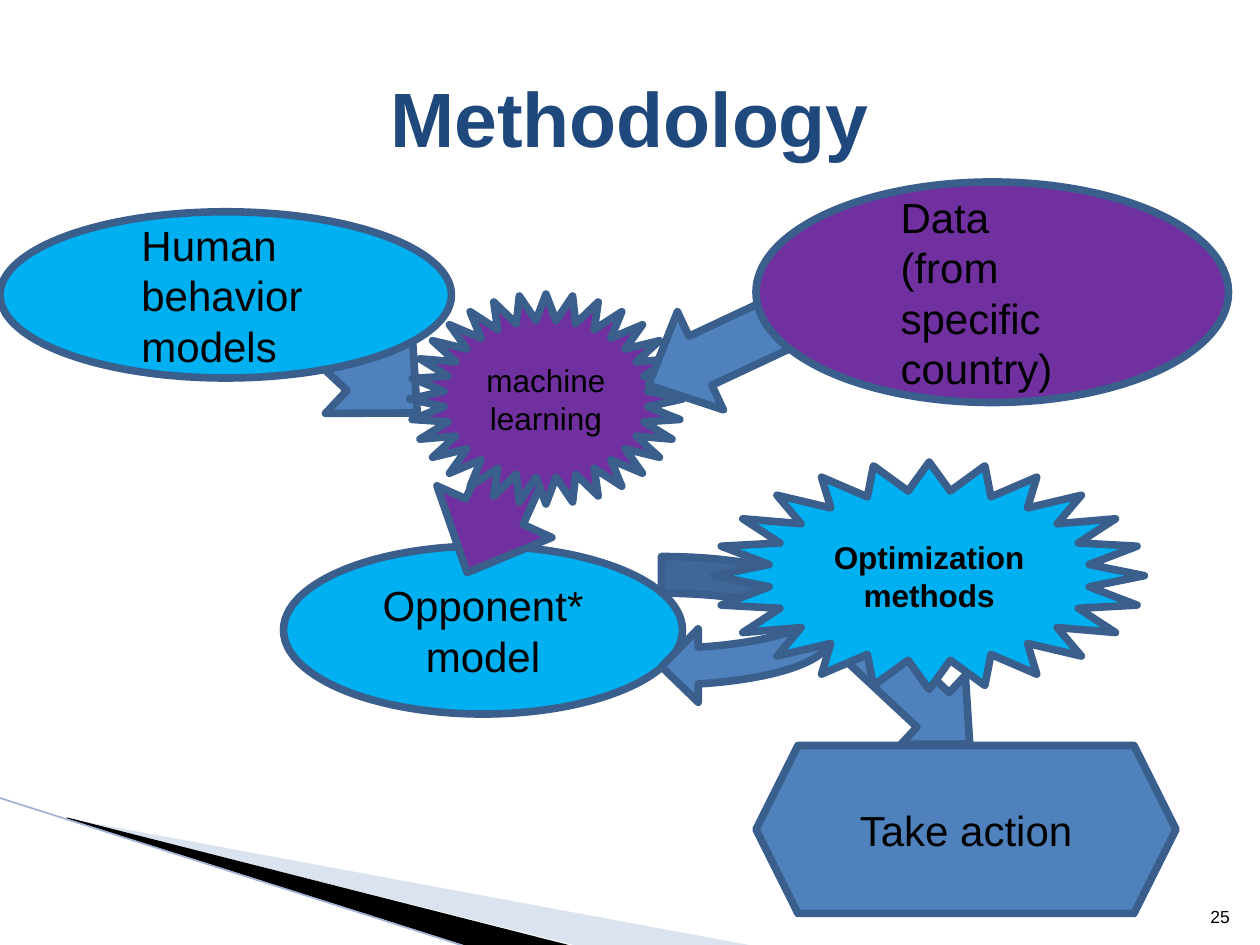
from dataclasses import dataclass
from typing import Optional

from lxml.etree import SubElement
from pptx import Presentation
from pptx.dml.color import RGBColor
from pptx.enum.shapes import MSO_CONNECTOR, MSO_SHAPE as Preset
from pptx.enum.text import MSO_ANCHOR as Anchor, PP_ALIGN as Align
from pptx.oxml.ns import qn
from pptx.util import Pt

FONT = "Arial"
BLACK = RGBColor(0x00, 0x00, 0x00)
NAVY = RGBColor(0x1F, 0x49, 0x7D)
STEEL = RGBColor(0x4F, 0x81, 0xBD)
OUTLINE = RGBColor(0x3A, 0x5F, 0x8C)
CYAN = RGBColor(0x00, 0xB0, 0xF0)
PURPLE = RGBColor(0x70, 0x30, 0xA0)
PALE_BLUE = RGBColor(0xA7, 0xB9, 0xDB)
EDGE_BLUE = RGBColor(0x9E, 0xB3, 0xD6)


@dataclass(frozen=True)
class Box:
    left: float
    top: float
    width: float
    height: float

    def lengths(self) -> tuple:
        return Pt(self.left), Pt(self.top), Pt(self.width), Pt(self.height)


@dataclass(frozen=True)
class Node:
    preset: Preset
    box: Box
    fill: RGBColor
    lines: tuple = ()
    size: float = 24
    bold: bool = False
    indent: float = 0


@dataclass(frozen=True)
class Arrow:
    box: Box
    rotation: float
    fill: RGBColor = STEEL


@dataclass(frozen=True)
class Wedge:
    points: tuple
    fill: RGBColor
    opacity: Optional[int] = None


WEDGES = (
    Wedge(((39.6, 468.5), (428.5, 540.5), (328.5, 540.5)), PALE_BLUE, 40),
    Wedge(((38.2, 467.3), (329, 540.7), (268, 541.4), (38.9, 468)), BLACK),
)

# Drawn from back to front.
DIAGRAM = (
    Arrow(Box(493.2, 347, 54, 92.9), 313),
    Arrow(Box(170.6, 162.7, 72, 87.1), 313),
    Node(Preset.OVAL, Box(162, 312, 228, 96), CYAN, ("Opponent* model",)),
    Node(Preset.OVAL, Box(0, 121, 258, 95), CYAN,
         ("Human behavior models",), indent=36),
    Arrow(Box(259.2, 195.1, 72, 138.2), 24.2, PURPLE),
    Node(Preset.HEXAGON, Box(432, 426, 240, 96), STEEL, ("Take action",)),
    Node(Preset.STAR_32_POINT, Box(234, 168, 156, 120), PURPLE,
         ("machine learning",), size=18),
    Node(Preset.CURVED_LEFT_ARROW, Box(378, 318, 96, 84), STEEL),
    Node(Preset.STAR_24_POINT, Box(408, 264, 246, 130), CYAN,
         ("Optimization", "methods"), size=18, bold=True),
    Arrow(Box(385.2, 148.3, 61.9, 100.8), 64.9),
    Node(Preset.OVAL, Box(432, 104, 270, 126), PURPLE,
         ("Data", "(from specific country)"), indent=36),
)


def write_lines(shape, lines: tuple, size: float, align: Align, anchor: Anchor,
                color: RGBColor = BLACK, bold: bool = False,
                indent: float = 0) -> None:
    frame = shape.text_frame
    frame.word_wrap = True
    frame.vertical_anchor = anchor
    frame.text = "\n".join(lines)
    for paragraph in frame.paragraphs:
        paragraph.alignment = align
        if indent:
            properties = paragraph._p.get_or_add_pPr()
            properties.set("marL", str(Pt(indent)))
            properties.set("indent", "0")
        font = paragraph.font
        font.name = FONT
        font.size = Pt(size)
        font.bold = bold
        font.color.rgb = color


def add_outlined(slide, preset: Preset, box: Box, fill: RGBColor):
    shape = slide.shapes.add_shape(preset, *box.lengths())
    shape.shadow.inherit = False
    shape.fill.solid()
    shape.fill.fore_color.rgb = fill
    shape.line.color.rgb = OUTLINE
    shape.line.width = Pt(4.33)
    return shape


def add_node(slide, node: Node) -> None:
    shape = add_outlined(slide, node.preset, node.box, node.fill)
    if node.lines:
        align = Align.LEFT if node.indent else Align.CENTER
        write_lines(shape, node.lines, node.size, align, Anchor.MIDDLE,
                    bold=node.bold, indent=node.indent)


def add_arrow(slide, arrow: Arrow) -> None:
    shape = add_outlined(slide, Preset.DOWN_ARROW, arrow.box, arrow.fill)
    shape.adjustments[0] = 0.5
    shape.adjustments[1] = 0.53
    shape.rotation = arrow.rotation


def add_wedge(slide, wedge: Wedge) -> None:
    start, *rest = wedge.points
    builder = slide.shapes.build_freeform(*start, scale=float(Pt(1)))
    builder.add_line_segments(rest, close=True)
    shape = builder.convert_to_shape()
    shape.shadow.inherit = False
    shape.line.fill.background()
    shape.fill.solid()
    shape.fill.fore_color.rgb = wedge.fill
    if wedge.opacity is not None:
        color = shape._element.spPr.find(qn("a:solidFill"))[0]
        SubElement(color, qn("a:alpha"), val=str(wedge.opacity * 1000))


def add_corner_edge(slide) -> None:
    edge = slide.shapes.add_connector(
        MSO_CONNECTOR.STRAIGHT, Pt(-0.7), Pt(455.8), Pt(267.8), Pt(541.4))
    edge.line.color.rgb = EDGE_BLUE
    edge.line.width = Pt(0.95)
    SubElement(edge._element.spPr, qn("a:effectLst"))


def main() -> None:
    presentation = Presentation()
    presentation.slide_width = Pt(720)
    presentation.slide_height = Pt(540)
    slide = presentation.slides.add_slide(presentation.slide_layouts[5])

    title = slide.shapes.title
    title.left, title.top, title.width, title.height = Box(
        36, 21.6, 648, 90).lengths()
    write_lines(title, ("Methodology",), 44, Align.CENTER, Anchor.MIDDLE,
                color=NAVY, bold=True)

    for wedge in WEDGES:
        add_wedge(slide, wedge)
    add_corner_edge(slide)

    for item in DIAGRAM:
        if isinstance(item, Arrow):
            add_arrow(slide, item)
        else:
            add_node(slide, item)

    page_number = slide.shapes.add_textbox(*Box(681, 504.7, 28.8, 28.8).lengths())
    write_lines(page_number, ("25",), 10, Align.RIGHT, Anchor.BOTTOM)

    presentation.save("out.pptx")


if __name__ == "__main__":
    main()
